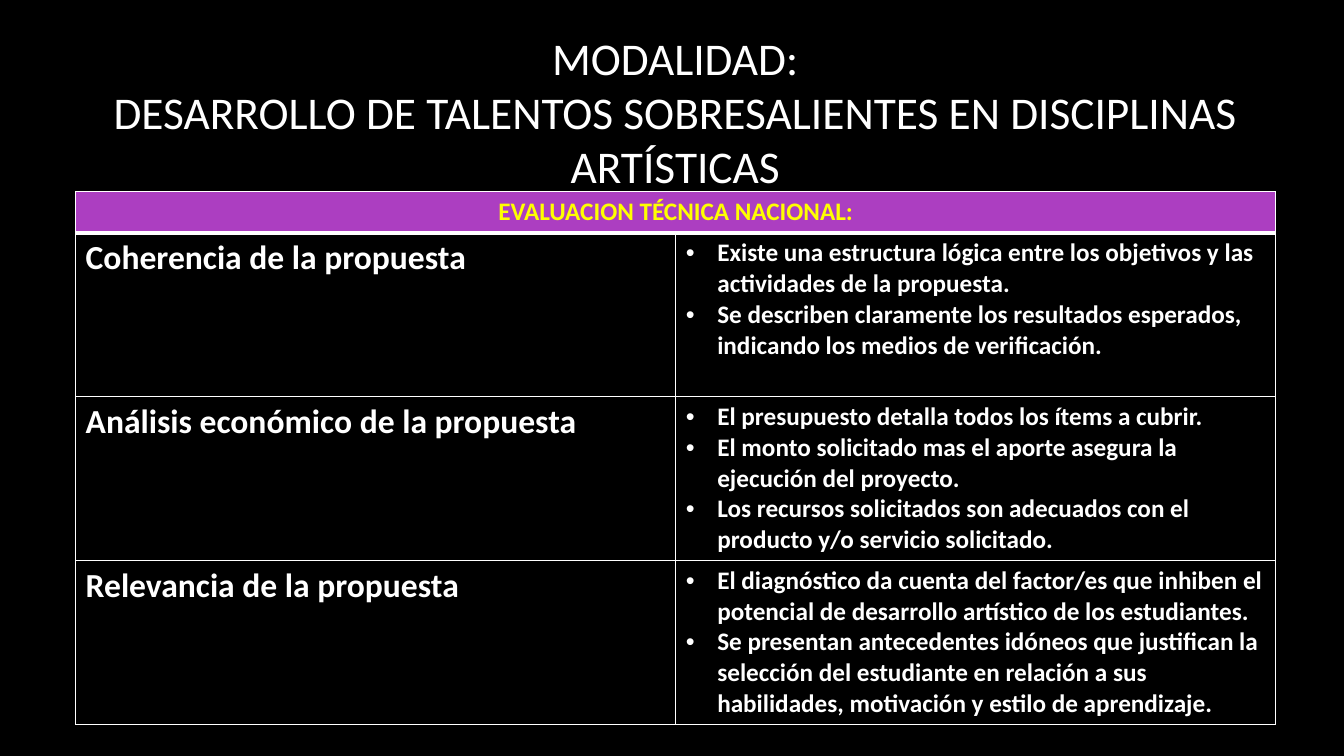
from dataclasses import dataclass

from lxml.etree import SubElement
from pptx import Presentation
from pptx.dml.color import RGBColor as Color
from pptx.enum.text import MSO_ANCHOR as Anchor, PP_ALIGN as Align
from pptx.oxml.ns import qn
from pptx.slide import Slide
from pptx.table import _Cell as Cell
from pptx.text.text import TextFrame as Frame
from pptx.util import Pt

WHITE, BLACK, YELLOW, PURPLE = "FFFFFF", "000000", "FFFF00", "AC3EC1"
FONT = "Calibri"
INDENT = 22.5


@dataclass
class Topic:
    name: str
    points: list[str]


TITLE = "MODALIDAD:\nDESARROLLO DE TALENTOS SOBRESALIENTES EN DISCIPLINAS ARTÍSTICAS"
HEADER = "EVALUACION TÉCNICA NACIONAL:"
TOPICS = [
    Topic("Coherencia de la propuesta", [
        "Existe una estructura lógica entre los objetivos y las actividades de la propuesta.",
        "Se describen claramente los resultados esperados, indicando los medios de verificación.",
    ]),
    Topic("Análisis económico de la propuesta", [
        "El presupuesto detalla todos los ítems a cubrir.",
        "El monto solicitado mas el aporte asegura la ejecución del proyecto.",
        "Los recursos solicitados son adecuados con el producto y/o servicio solicitado.",
    ]),
    Topic("Relevancia de la propuesta", [
        "El diagnóstico da cuenta del factor/es que inhiben el potencial de desarrollo "
        "artístico de los estudiantes.",
        "Se presentan antecedentes idóneos que justifican la selección del estudiante en "
        "relación a sus habilidades, motivación y estilo de aprendizaje.",
    ]),
]


def rgb(code: str) -> Color:
    return Color.from_string(code)


def write(frame: Frame, lines: list[str], *, size: float, color: str = WHITE,
          bold: bool = True, align: Align = Align.LEFT, bullet: bool = False) -> None:
    for num, line in enumerate(lines):
        para = frame.add_paragraph() if num else frame.paragraphs[0]
        para.text = line
        para.alignment = align
        if bullet:
            props = para._p.get_or_add_pPr()
            props.set("marL", str(Pt(INDENT)))
            props.set("indent", str(-Pt(INDENT)))
            SubElement(props, qn("a:buFont")).set("typeface", "Arial")
            SubElement(props, qn("a:buChar")).set("char", "•")
        for run in para.runs:
            font = run.font
            font.name, font.size, font.bold = FONT, Pt(size), bold
            font.color.rgb = rgb(color)


def frame_cell(cell: Cell, *, fill: str = BLACK, top: float = 1, base: float = 1) -> None:
    cell.fill.solid()
    cell.fill.fore_color.rgb = rgb(fill)
    props = cell._tc.get_or_add_tcPr()
    sides = {"L": 1, "R": 1, "T": top, "B": base}
    for place, (side, width) in enumerate(sides.items()):
        line = SubElement(props, qn(f"a:ln{side}"), w=str(Pt(width)))
        solid = SubElement(line, qn("a:solidFill"))
        SubElement(solid, qn("a:srgbClr"), val=WHITE)
        props.insert(place, line)


def add_title(slide: Slide) -> None:
    box = slide.shapes.add_textbox(Pt(48.2), Pt(22.3), Pt(868.3), Pt(114.5))
    box.text_frame.word_wrap = True
    box.text_frame.vertical_anchor = Anchor.MIDDLE
    write(box.text_frame, [TITLE], size=32.4, bold=False, align=Align.CENTER)


def add_grid(slide: Slide) -> None:
    head, body, width = 29.5, 117, 857.4
    rows = len(TOPICS) + 1
    grid = slide.shapes.add_table(
        rows, 2, Pt(54), Pt(136.8), Pt(width), Pt(head + body * len(TOPICS))).table
    grid.horz_banding = False
    for num, row in enumerate(grid.rows):
        row.height = Pt(body if num else head)
    for cell in grid.rows[0].cells:
        frame_cell(cell, fill=PURPLE, base=3)
    first = grid.cell(0, 0)
    first.merge(grid.cell(0, 1))
    write(first.text_frame, [HEADER], size=18, color=YELLOW, align=Align.CENTER)
    for num, topic in enumerate(TOPICS, 1):
        left, right = grid.cell(num, 0), grid.cell(num, 1)
        for cell in (left, right):
            frame_cell(cell, top=3 if num == 1 else 1)
        write(left.text_frame, [topic.name], size=24)
        write(right.text_frame, topic.points, size=18, bullet=True)


def main() -> None:
    deck = Presentation()
    deck.slide_width, deck.slide_height = Pt(960), Pt(540)
    slide = deck.slides.add_slide(deck.slide_layouts[6])
    slide.background.fill.solid()
    slide.background.fill.fore_color.rgb = rgb(BLACK)
    add_title(slide)
    add_grid(slide)
    deck.save("out.pptx")


if __name__ == "__main__":
    main()
